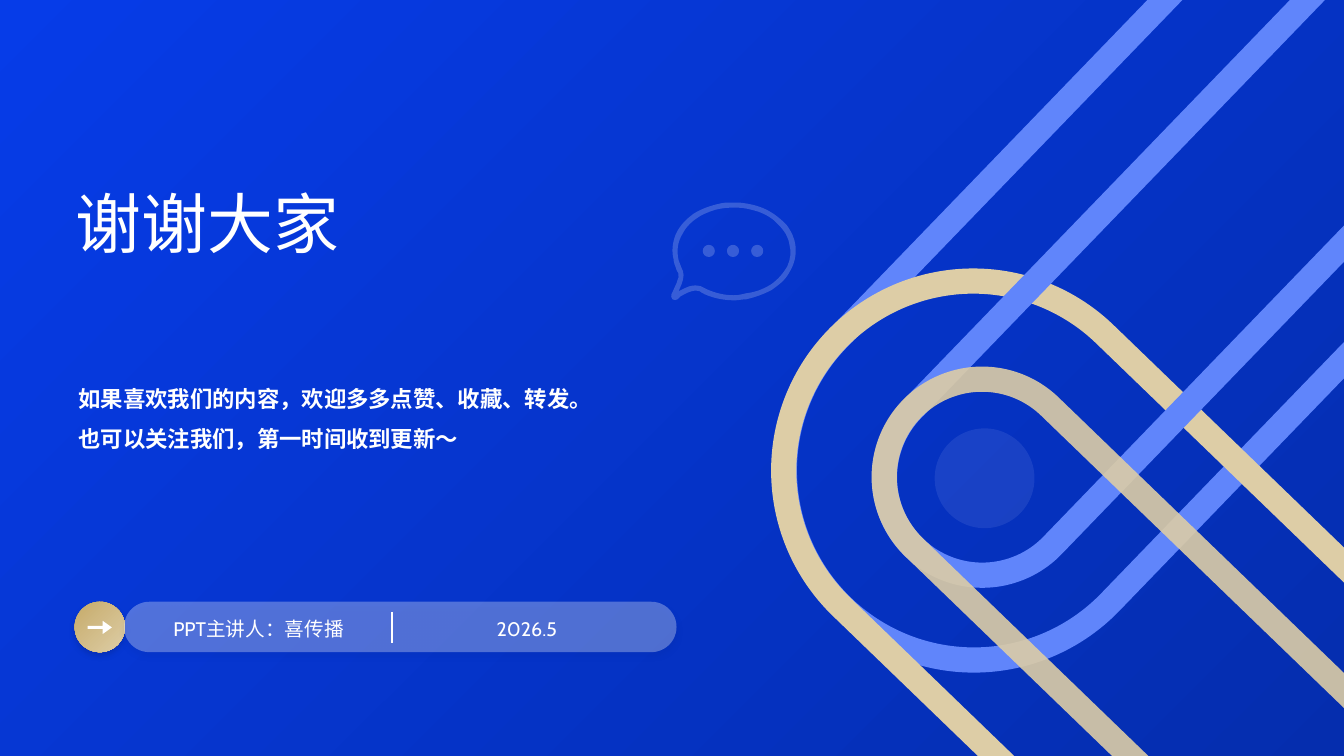
from dataclasses import dataclass

from lxml import etree
from pptx import Presentation
from pptx import util as u
from pptx.dml.color import RGBColor
from pptx.enum import shapes, text
from pptx.oxml import ns

FORMS = shapes.MSO_SHAPE


@dataclass(frozen=True)
class Theme:
    white: str = "FFFFFF"
    deep_blue: str = "052DAE"
    bright_blue: str = "063CE8"
    ribbon_blue: str = "6085FB"
    pale_blue: str = "CAD6FE"
    gold: str = "C6AB6A"
    sand: str = "DDCDA6"
    shadow: str = "031E74"
    latin: str = "Cabin"
    chinese: str = "Noto Sans CJK SC"
    title: int = 47
    body: int = 16
    label: int = 14
    ribbon: int = 18


def add_alpha(parent, percent):
    for color in parent.iter(ns.qn("a:srgbClr")):
        etree.SubElement(color, ns.qn("a:alpha"), val=str(percent * 1000))


def circle_curves(x, y, radius):
    k = radius * 0.55
    r = radius
    return (x, y - r), [
        (x + k, y - r, x + r, y - k, x + r, y), (x + r, y + k, x + k, y + r, x, y + r),
        (x - k, y + r, x - r, y + k, x - r, y), (x - r, y - k, x - k, y - r, x, y - r),
    ]


class SlideBuilder:
    def __init__(self, slide, theme):
        self.slide = slide
        self.theme = theme

    def shape(self, form, box, fill=None, alpha=None, adjustments=()):
        shape = self.slide.shapes.add_shape(form, *map(u.Inches, box))
        for index, value in enumerate(adjustments):
            shape.adjustments[index] = value
        self.paint(shape, fill, alpha)
        return shape

    def paint(self, shape, fill, alpha=None):
        shape.shadow.inherit = False
        shape.line.fill.background()
        if fill is None:
            shape.fill.background()
        elif isinstance(fill, tuple):
            shape.fill.gradient()
            shape.fill.gradient_angle = 315
            for stop, color in zip(shape.fill.gradient_stops, fill):
                stop.color.rgb = RGBColor.from_string(color)
        else:
            shape.fill.solid()
            shape.fill.fore_color.rgb = RGBColor.from_string(fill)
        if alpha:
            add_alpha(shape._element.spPr, alpha)

    def ribbon(self, box, rotation, color, alpha=None):
        shape = self.shape(FORMS.ROUND_2_SAME_RECTANGLE, box, adjustments=(0.5, 0))
        shape.rotation = rotation
        shape.line.color.rgb = RGBColor.from_string(color)
        shape.line.width = u.Pt(self.theme.ribbon)
        if alpha:
            add_alpha(shape._element.spPr, alpha)

    def drop_shadow(self, shape):
        effects = shape._element.spPr.find(ns.qn("a:effectLst"))
        shadow = etree.SubElement(
            effects, ns.qn("a:outerShdw"), blurRad=str(u.Pt(4)), dist=str(u.Pt(3)),
            dir="5400000", algn="t", rotWithShape="0")
        etree.SubElement(shadow, ns.qn("a:srgbClr"), val=self.theme.shadow)
        add_alpha(shadow, 25)

    def curved_outline(self, contours, fill, alpha):
        builder = None
        for start, curves in contours:
            start = tuple(map(u.Inches, start))
            if builder is None:
                builder = self.slide.shapes.build_freeform(*start)
            else:
                builder.move_to(*start)
            points = [(u.Inches(curve[i]), u.Inches(curve[i + 1]))
                      for curve in curves for i in (0, 2, 4)]
            builder.add_line_segments(points, close=True)
        shape = builder.convert_to_shape()
        segments = list(shape._element.iter(ns.qn("a:lnTo")))
        for first in range(0, len(segments), 3):
            curve = etree.Element(ns.qn("a:cubicBezTo"))
            segments[first].addprevious(curve)
            for segment in segments[first:first + 3]:
                curve.append(segment[0])
                segment.getparent().remove(segment)
        self.paint(shape, fill, alpha)

    def divider(self, x, top, bottom):
        line = self.slide.shapes.add_connector(
            shapes.MSO_CONNECTOR.STRAIGHT, *map(u.Inches, (x, top, x, bottom)))
        line.line.color.rgb = RGBColor.from_string(self.theme.white)
        line.line.width = u.Pt(1)
        etree.SubElement(line._element.spPr, ns.qn("a:effectLst"))

    def text(self, box, content, size, spacing=1.1, font=None, bold=False,
             align=text.PP_ALIGN.LEFT, anchor=text.MSO_ANCHOR.MIDDLE, inset=True):
        frame = self.slide.shapes.add_textbox(*map(u.Inches, box)).text_frame
        frame.word_wrap = True
        frame.vertical_anchor = anchor
        if not inset:
            frame.margin_left = frame.margin_right = 0
            frame.margin_top = frame.margin_bottom = 0
        paragraph = frame.paragraphs[0]
        paragraph.alignment = align
        paragraph.line_spacing = spacing
        run = paragraph.add_run()
        run.text = content
        run.font.size = u.Pt(size)
        run.font.bold = bold
        run.font.color.rgb = RGBColor.from_string(self.theme.white)
        run.font.name = font or self.theme.latin
        east_asian = etree.Element(ns.qn("a:ea"), typeface=self.theme.chinese)
        run.font._element.find(ns.qn("a:latin")).addnext(east_asian)


BUBBLE_OUTER = (7.24, 2.01), [
    (7.27, 2.01, 7.3, 2.01, 7.33, 2.01), (7.43, 2.02, 7.52, 2.04, 7.6, 2.08),
    (7.68, 2.12, 7.74, 2.17, 7.8, 2.23), (7.85, 2.3, 7.88, 2.36, 7.89, 2.44),
    (7.9, 2.53, 7.88, 2.62, 7.83, 2.7), (7.79, 2.78, 7.72, 2.83, 7.65, 2.88),
    (7.57, 2.92, 7.49, 2.95, 7.4, 2.97), (7.36, 2.97, 7.32, 2.98, 7.29, 2.98),
    (7.18, 2.98, 7.08, 2.96, 6.99, 2.92), (6.97, 2.91, 6.95, 2.9, 6.94, 2.89),
    (6.91, 2.88, 6.88, 2.88, 6.86, 2.89), (6.82, 2.9, 6.79, 2.92, 6.75, 2.94),
    (6.74, 2.95, 6.73, 2.96, 6.72, 2.97), (6.7, 2.98, 6.69, 2.98, 6.67, 2.97),
    (6.66, 2.95, 6.65, 2.94, 6.66, 2.92), (6.68, 2.88, 6.69, 2.85, 6.71, 2.81),
    (6.72, 2.79, 6.72, 2.77, 6.73, 2.75), (6.73, 2.72, 6.73, 2.7, 6.71, 2.68),
    (6.7, 2.64, 6.68, 2.61, 6.68, 2.57), (6.66, 2.49, 6.67, 2.41, 6.7, 2.33),
    (6.74, 2.24, 6.8, 2.18, 6.88, 2.12), (6.96, 2.07, 7.05, 2.04, 7.14, 2.02),
    (7.18, 2.01, 7.21, 2.01, 7.24, 2.01),
]
BUBBLE_INNER = (7.31, 2.06), [
    (7.26, 2.06, 7.21, 2.06, 7.15, 2.07), (7.08, 2.08, 7.01, 2.11, 6.95, 2.14),
    (6.87, 2.19, 6.81, 2.24, 6.77, 2.32), (6.72, 2.4, 6.71, 2.49, 6.73, 2.58),
    (6.74, 2.61, 6.75, 2.63, 6.76, 2.66), (6.77, 2.68, 6.78, 2.7, 6.78, 2.73),
    (6.78, 2.76, 6.77, 2.79, 6.76, 2.82), (6.75, 2.84, 6.74, 2.87, 6.73, 2.89),
    (6.77, 2.87, 6.81, 2.85, 6.84, 2.84), (6.88, 2.83, 6.91, 2.83, 6.95, 2.84),
    (6.97, 2.85, 6.99, 2.86, 7.01, 2.87), (7.1, 2.91, 7.19, 2.93, 7.28, 2.93),
    (7.32, 2.93, 7.36, 2.92, 7.4, 2.91), (7.49, 2.9, 7.57, 2.87, 7.65, 2.82),
    (7.72, 2.77, 7.77, 2.71, 7.81, 2.64), (7.84, 2.57, 7.85, 2.5, 7.83, 2.43),
    (7.82, 2.35, 7.78, 2.29, 7.72, 2.23), (7.67, 2.17, 7.6, 2.13, 7.52, 2.1),
    (7.45, 2.08, 7.38, 2.06, 7.31, 2.06),
]


def main():
    presentation = Presentation()
    presentation.slide_width = u.Inches(13.33)
    presentation.slide_height = u.Inches(7.5)
    theme = Theme()
    page = SlideBuilder(presentation.slides.add_slide(presentation.slide_layouts[6]), theme)

    page.shape(FORMS.RECTANGLE, (0, 0, 13.33, 7.5), (theme.bright_blue, theme.deep_blue))
    page.ribbon((9.79, -2.19, 3.76, 9.55), 224, theme.ribbon_blue)
    page.ribbon((9.23, 2.17, 3.76, 7.81), 314, theme.sand)
    page.ribbon((10.54, -0.61, 1.94, 7.03), 224, theme.ribbon_blue)
    page.ribbon((10.14, 3.18, 1.94, 5.75), 314, theme.sand, 90)
    page.shape(FORMS.OVAL, (9.27, 4.25, 0.99, 0.99), theme.pale_blue, 10)

    badge = page.shape(FORMS.OVAL, (0.74, 5.97, 0.5, 0.5), (theme.gold, theme.sand))
    page.drop_shadow(badge)
    page.shape(FORMS.RIGHT_ARROW, (0.87, 6.16, 0.24, 0.13), theme.white,
               adjustments=(0.24, 0.7))
    bar = page.shape(FORMS.ROUNDED_RECTANGLE, (1.23, 5.97, 5.48, 0.5), theme.white, 30, (0.5,))
    page.drop_shadow(bar)
    for left, label in ((1.53, "PPT主讲人：喜传播"), (4.19, "2026.5")):
        page.text((left, 6.06, 2.07, 0.34), label, theme.label,
                  align=text.PP_ALIGN.CENTER, inset=False)
    page.divider(3.89, 6.07, 6.38)

    dots = [circle_curves(7.27 + offset, 2.49, 0.06) for offset in (0, -0.24, 0.24)]
    page.curved_outline([*dots, BUBBLE_INNER, BUBBLE_OUTER], theme.white, 20)
    page.text((0.75, 0.7, 6.44, 2.94), "谢谢大家", theme.title, inset=False)
    page.text((0.68, 3.64, 5.35, 1.74),
              "如果喜欢我们的内容，欢迎多多点赞、收藏、转发。也可以关注我们，第一时间收到更新～",
              theme.body, 1.5, theme.chinese, True, anchor=text.MSO_ANCHOR.TOP)
    presentation.save("out.pptx")


if __name__ == "__main__":
    main()
